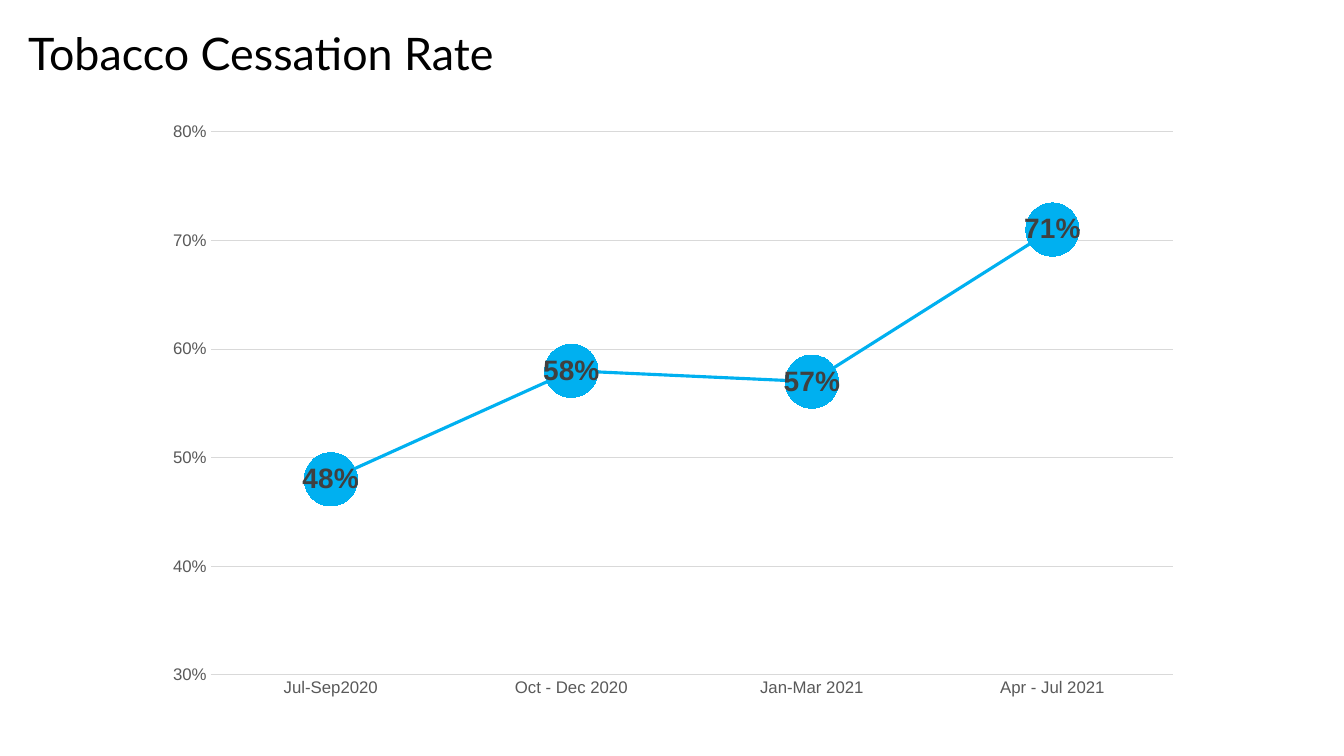
"""Build the tobacco cessation rate slide."""
import pptx
import pptx.chart.data
import pptx.dml.color
import pptx.enum.chart
import pptx.enum.text
import pptx.util

Pt = pptx.util.Pt
RGBColor = pptx.dml.color.RGBColor

TITLE = "Tobacco Cessation Rate"
RATES = {
    "Jul-Sep2020": 0.48,
    "Oct - Dec 2020": 0.58,
    "Jan-Mar 2021": 0.57,
    "Apr - Jul 2021": 0.71,
}
PERCENT = "0%"

BLACK = RGBColor(0x00, 0x00, 0x00)
BLUE = RGBColor(0x00, 0xB0, 0xF0)
LABEL_GRAY = RGBColor(0x40, 0x40, 0x40)
AXIS_GRAY = RGBColor(0x59, 0x59, 0x59)
GRID_GRAY = RGBColor(0xD9, 0xD9, 0xD9)


def set_font(font, name, size, color, bold=False):
    font.name = name
    font.size = Pt(size)
    font.color.rgb = color
    font.bold = bold


def set_line(line, color, width):
    line.color.rgb = color
    line.width = Pt(width)


def add_title(slide):
    title = slide.shapes.title
    title.left, title.top, title.width, title.height = Pt(20), Pt(23), Pt(889), Pt(42.5)
    frame = title.text_frame
    frame.text = TITLE
    frame.word_wrap = True
    frame.auto_size = pptx.enum.text.MSO_AUTO_SIZE.NONE
    frame.vertical_anchor = pptx.enum.text.MSO_ANCHOR.TOP
    frame.margin_left = frame.margin_top = frame.margin_right = frame.margin_bottom = 0
    paragraph = frame.paragraphs[0]
    paragraph.alignment = pptx.enum.text.PP_ALIGN.LEFT
    paragraph.line_spacing = 0.9
    set_font(paragraph.font, "Lato", 32, BLACK)


def format_axes(chart):
    for axis in (chart.category_axis, chart.value_axis):
        axis.major_tick_mark = pptx.enum.chart.XL_TICK_MARK.NONE
        axis.minor_tick_mark = pptx.enum.chart.XL_TICK_MARK.NONE
        set_font(axis.tick_labels.font, "Arial", 12, AXIS_GRAY)
    set_line(chart.category_axis.format.line, GRID_GRAY, 0.75)
    values = chart.value_axis
    values.minimum_scale, values.maximum_scale, values.major_unit = 0.3, 0.8, 0.1
    values.tick_labels.number_format = PERCENT
    values.tick_labels.number_format_is_linked = False
    values.format.line.fill.background()
    values.has_major_gridlines = True
    set_line(values.major_gridlines.format.line, GRID_GRAY, 0.75)


def format_series(series):
    series.smooth = False
    set_line(series.format.line, BLUE, 2.25)
    marker = series.marker
    marker.style = pptx.enum.chart.XL_MARKER_STYLE.CIRCLE
    marker.size = 38
    marker.format.fill.solid()
    marker.format.fill.fore_color.rgb = BLUE
    marker.format.line.fill.background()
    labels = series.data_labels
    labels.show_value = True
    labels.position = pptx.enum.chart.XL_LABEL_POSITION.CENTER
    labels.number_format = PERCENT
    labels.number_format_is_linked = False
    set_font(labels.font, "Arial", 20, LABEL_GRAY, bold=True)


def add_rate_chart(slide):
    data = pptx.chart.data.CategoryChartData(number_format=PERCENT)
    data.categories = list(RATES)
    data.add_series("Series 1", list(RATES.values()))
    chart = slide.shapes.add_chart(
        pptx.enum.chart.XL_CHART_TYPE.LINE_MARKERS_STACKED,
        Pt(108.7), Pt(79.2), Pt(743.8), Pt(427), data,
    ).chart
    chart.has_title = False
    chart.has_legend = False
    set_font(chart.font, "Arial", 10, BLACK)
    chart.plots[0].vary_by_categories = False
    format_axes(chart)
    format_series(chart.plots[0].series[0])


def main():
    presentation = pptx.Presentation()
    presentation.slide_width, presentation.slide_height = Pt(960), Pt(540)
    slide = presentation.slides.add_slide(presentation.slide_layouts[5])
    add_title(slide)
    add_rate_chart(slide)
    presentation.save("out.pptx")


if __name__ == "__main__":
    main()
